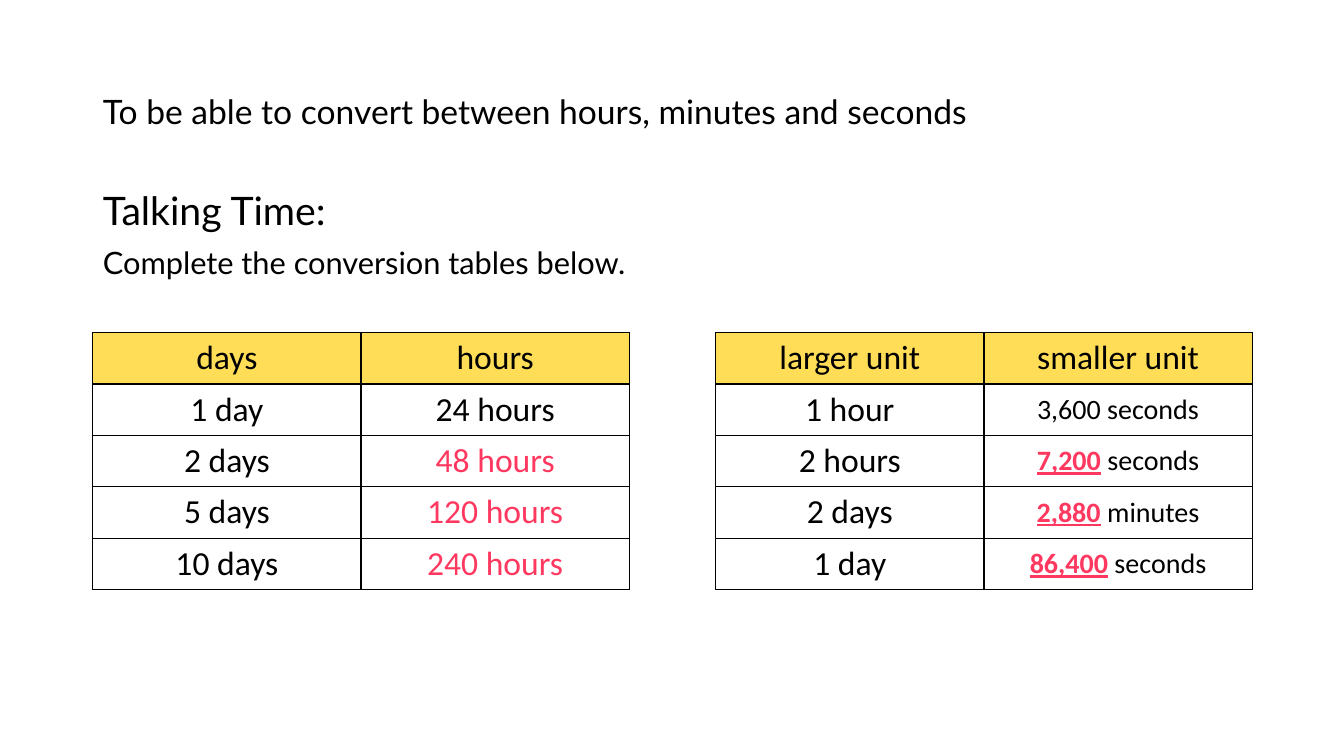
import lxml.etree
import pptx
import pptx.dml.color
import pptx.enum.text
import pptx.oxml
import pptx.oxml.ns
import pptx.util

COLUMN, ROW = 0.46, 0.5
BLACK, WHITE, YELLOW, PINK = "000000", "FFFFFF", "FFDD57", "FF3860"
LEFT = pptx.enum.text.PP_ALIGN.LEFT
CENTER = pptx.enum.text.PP_ALIGN.CENTER
MIDDLE = pptx.enum.text.MSO_ANCHOR.MIDDLE


def rgb(color):
    """Turn a hex string into a colour."""
    return pptx.dml.color.RGBColor.from_string(color)


def columns(count):
    """Give the width of a number of grid columns."""
    return pptx.util.Inches(count * COLUMN)


def rows(count):
    """Give the height of a number of grid rows."""
    return pptx.util.Inches(count * ROW)


def answer(text):
    """Mark a whole cell as an answer."""
    return [(text, PINK, False)]


def amount(number, unit):
    """Mark a number as an underlined answer in front of its unit."""
    return [(number, PINK, True), (f" {unit}", BLACK, False)]


class Lesson:
    """Hold the style and the current slide."""

    text_font = "Lato"
    table_font = "Calibri"

    def __init__(self, slide):
        """Keep the slide to draw on."""
        self.slide = slide

    def style(self, run, size, font, color=BLACK, strong=False):
        """Format one run."""
        run.font.name = font
        run.font.size = pptx.util.Pt(size)
        run.font.color.rgb = rgb(color)
        run.font.bold = strong
        run.font.underline = strong

    def place(self, shape, left, top, width, height):
        """Move a placeholder to its place on the grid."""
        shape.left, shape.top = columns(left), rows(top)
        shape.width, shape.height = columns(width), rows(height)
        shape.text_frame.auto_size = pptx.enum.text.MSO_AUTO_SIZE.NONE

    def line(self, paragraph, text, size):
        """Write one left-aligned line."""
        paragraph.text = text
        paragraph.alignment = LEFT
        paragraph.line_spacing = 0.9
        paragraph.space_before = pptx.util.Pt(0)
        self.style(paragraph.runs[0], size, self.text_font)

    def title(self, text, size, *place):
        """Fill the title placeholder."""
        shape = self.slide.shapes.title
        self.place(shape, *place)
        shape.text_frame.vertical_anchor = MIDDLE
        self.line(shape.text_frame.paragraphs[0], text, size)

    def body(self, lines, *place):
        """Fill the body placeholder with unbulleted lines."""
        shape = self.slide.placeholders[1]
        self.place(shape, *place)
        shape.text_frame.text = "\n".join(text for text, size in lines)
        for index, (text, size) in enumerate(lines):
            paragraph = shape.text_frame.paragraphs[index]
            properties = paragraph._p.get_or_add_pPr()
            properties.set("marL", "0")
            properties.set("indent", "0")
            lxml.etree.SubElement(properties, pptx.oxml.ns.qn("a:buNone"))
            self.line(paragraph, text, size)
            paragraph.space_before = pptx.util.Pt(10 if index else 0)

    def borders(self, cell):
        """Draw a thin black line on each side of a cell."""
        properties = cell._tc.get_or_add_tcPr()
        for side in ("lnL", "lnR", "lnT", "lnB"):
            properties.append(pptx.oxml.parse_xml(
                f'<a:{side} {pptx.oxml.ns.nsdecls("a")} w="12700"><a:solidFill>'
                f'<a:srgbClr val="{BLACK}"/></a:solidFill></a:{side}>'))

    def cell(self, cell, content, size, fill):
        """Fill one table cell with text or marked runs."""
        pieces = [(content, BLACK, False)] if isinstance(content, str) else content
        self.borders(cell)
        cell.fill.solid()
        cell.fill.fore_color.rgb = rgb(fill)
        cell.vertical_anchor = MIDDLE
        paragraph = cell.text_frame.paragraphs[0]
        paragraph.alignment = CENTER
        for text, color, strong in pieces:
            run = paragraph.add_run()
            run.text = text
            self.style(run, size, self.table_font, color, strong)

    def table(self, content, left, top, width, row_height, result_size):
        """Add a two-column conversion table."""
        frame = self.slide.shapes.add_table(
            len(content), 2, columns(left), rows(top),
            columns(width), rows(row_height * len(content)))
        table = frame.table
        table.first_row = table.horz_banding = False
        for row_index, values in enumerate(content):
            for column_index, value in enumerate(values):
                size = result_size if row_index and column_index else 24
                fill = WHITE if row_index else YELLOW
                self.cell(table.cell(row_index, column_index), value, size, fill)


def main():
    """Build the slide and save it."""
    presentation = pptx.Presentation()
    presentation.slide_width = pptx.util.Inches(13.33)
    presentation.slide_height = pptx.util.Inches(7.5)
    lesson = Lesson(presentation.slides.add_slide(presentation.slide_layouts[1]))
    lesson.title("To be able to convert between hours, minutes and seconds",
                 24, 2, 0.8, 20.87, 2.9)
    lesson.body([("Talking Time:", 28),
                 ("Complete the conversion tables below.", 22)],
                2, 3.7, 26.2, 9.52)
    days = [
        ("days", "hours"),
        ("1 day", "24 hours"),
        ("2 days", answer("48 hours")),
        ("5 days", answer("120 hours")),
        ("10 days", answer("240 hours")),
    ]
    units = [
        ("larger unit", "smaller unit"),
        ("1 hour", "3,600 seconds"),
        ("2 hours", amount("7,200", "seconds")),
        ("2 days", amount("2,880", "minutes")),
        ("1 day", amount("86,400", "seconds")),
    ]
    for content, left, result_size in ((days, 2, 24), (units, 15.43, 20)):
        lesson.table(content, left, 6.6, 11.57, 1.02, result_size)
    presentation.save("out.pptx")


if __name__ == "__main__":
    main()
